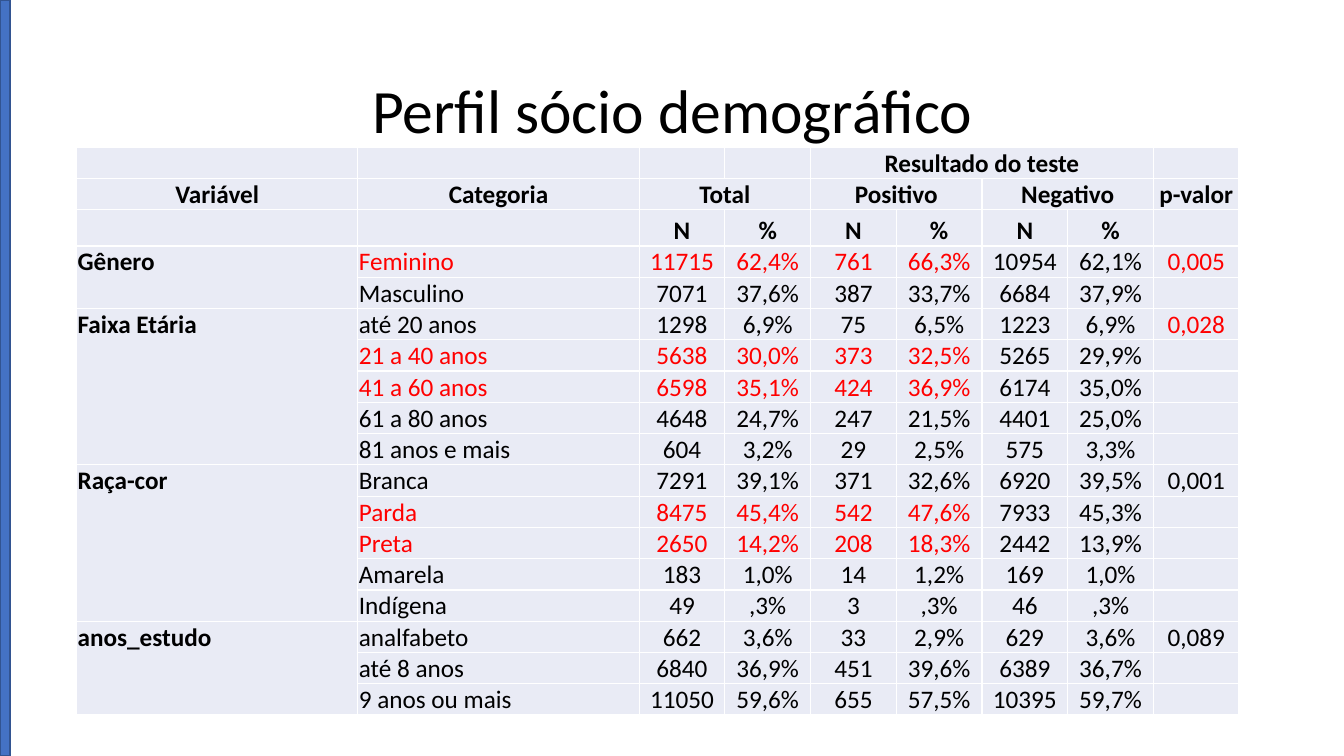
from pptx import Presentation
from pptx.dml.color import RGBColor
from pptx.enum.shapes import MSO_SHAPE
from pptx.enum.text import MSO_ANCHOR, PP_ALIGN
from pptx.util import Inches, Pt

TITLE = "Perfil sócio demográfico"
FONT = "Calibri"
BLACK, RED, CELL_FILL = "000000", "FF0000", "E9EBF5"
BAR_FILL, BAR_LINE = "4472C4", "325491"

HEADERS = [
    ["", "", "", "", "Resultado do teste", "", "", "", ""],
    ["Variável", "Categoria", "Total", "", "Positivo", "", "Negativo", "", "p-valor"],
    ["", "", "N", "%", "N", "%", "N", "%", ""],
]
HEADER_SPANS = [(0, 4, 7), (1, 2, 3), (1, 4, 5), (1, 6, 7)]  # row, first and last column

# variable, p-value, p-value colour, categories
GROUPS = [
    ("Gênero", "0,005", RED, [
        ("Feminino", "11715", "62,4%", "761", "66,3%", "10954", "62,1%"),
        ("Masculino", "7071", "37,6%", "387", "33,7%", "6684", "37,9%"),
    ]),
    ("Faixa Etária", "0,028", RED, [
        ("até 20 anos", "1298", "6,9%", "75", "6,5%", "1223", "6,9%"),
        ("21 a 40 anos", "5638", "30,0%", "373", "32,5%", "5265", "29,9%"),
        ("41 a 60 anos", "6598", "35,1%", "424", "36,9%", "6174", "35,0%"),
        ("61 a 80 anos", "4648", "24,7%", "247", "21,5%", "4401", "25,0%"),
        ("81 anos e mais", "604", "3,2%", "29", "2,5%", "575", "3,3%"),
    ]),
    ("Raça-cor", "0,001", BLACK, [
        ("Branca", "7291", "39,1%", "371", "32,6%", "6920", "39,5%"),
        ("Parda", "8475", "45,4%", "542", "47,6%", "7933", "45,3%"),
        ("Preta", "2650", "14,2%", "208", "18,3%", "2442", "13,9%"),
        ("Amarela", "183", "1,0%", "14", "1,2%", "169", "1,0%"),
        ("Indígena", "49", ",3%", "3", ",3%", "46", ",3%"),
    ]),
    ("anos_estudo", "0,089", BLACK, [
        ("analfabeto", "662", "3,6%", "33", "2,9%", "629", "3,6%"),
        ("até 8 anos", "6840", "36,9%", "451", "39,6%", "6389", "36,7%"),
        ("9 anos ou mais", "11050", "59,6%", "655", "57,5%", "10395", "59,7%"),
    ]),
]
HIGHLIGHTED = {"Feminino", "21 a 40 anos", "41 a 60 anos", "Parda", "Preta"}
HIGHLIGHTED_COLUMNS = range(1, 6)  # category, total and positive results

COLUMN_WIDTHS = [2.79] * 2 + [0.85] * 7
HEADER_HEIGHTS = [0.31, 0.31, 0.36]
ROW_HEIGHT = 0.31


def rgb(value):
    return RGBColor.from_string(value)


def style_paragraph(paragraph, size, color=BLACK, bold=False, alignment=PP_ALIGN.CENTER):
    paragraph.alignment = alignment
    font = paragraph.font
    font.name, font.size, font.bold = FONT, Pt(size), bold
    font.color.rgb = rgb(color)


def fill_cell(cell, text, color=BLACK, bold=False, alignment=PP_ALIGN.CENTER,
              anchor=MSO_ANCHOR.TOP):
    cell.text = text
    cell.fill.solid()
    cell.fill.fore_color.rgb = rgb(CELL_FILL)
    cell.margin_left = cell.margin_right = cell.margin_top = Inches(0.01)
    cell.margin_bottom = 0
    cell.vertical_anchor = anchor
    style_paragraph(cell.text_frame.paragraphs[0], 18, color, bold, alignment)


def add_title(slide):
    box = slide.shapes.add_textbox(Inches(0.92), Inches(0.4), Inches(11.5), Inches(1.45))
    frame = box.text_frame
    frame.word_wrap = True
    frame.vertical_anchor = MSO_ANCHOR.MIDDLE
    frame.text = TITLE
    frame.paragraphs[0].line_spacing = 0.9
    style_paragraph(frame.paragraphs[0], 44)


def add_profile_table(slide):
    category_count = sum(len(categories) for *_, categories in GROUPS)
    heights = HEADER_HEIGHTS + [ROW_HEIGHT] * category_count
    table = slide.shapes.add_table(
        len(heights), len(COLUMN_WIDTHS), Inches(0.76), Inches(1.46),
        Inches(sum(COLUMN_WIDTHS)), Inches(sum(heights))).table
    table.first_row = table.horz_banding = False
    for column, width in zip(table.columns, COLUMN_WIDTHS):
        column.width = Inches(width)
    for table_row, height in zip(table.rows, heights):
        table_row.height = Inches(height)

    for row, texts in enumerate(HEADERS):
        for column, text in enumerate(texts):
            fill_cell(table.cell(row, column), text, bold=True, anchor=MSO_ANCHOR.BOTTOM)
    for row, first, last in HEADER_SPANS:
        table.cell(row, first).merge(table.cell(row, last))

    row = len(HEADERS)
    for variable, p_value, p_color, categories in GROUPS:
        first_row = row
        for values in categories:
            is_first = row == first_row
            fill_cell(table.cell(row, 0), variable if is_first else "",
                      bold=True, alignment=PP_ALIGN.LEFT)
            for column, text in enumerate(values, start=1):
                is_red = values[0] in HIGHLIGHTED and column in HIGHLIGHTED_COLUMNS
                fill_cell(table.cell(row, column), text, RED if is_red else BLACK,
                          alignment=PP_ALIGN.LEFT if column == 1 else PP_ALIGN.CENTER)
            fill_cell(table.cell(row, 8), p_value if is_first else "", p_color,
                      anchor=MSO_ANCHOR.BOTTOM)
            row += 1
        table.cell(first_row, 0).merge(table.cell(row - 1, 0))


def add_side_bar(slide, height):
    bar = slide.shapes.add_shape(MSO_SHAPE.RECTANGLE, 0, 0, Inches(0.1), height)
    bar.shadow.inherit = False
    bar.fill.solid()
    bar.fill.fore_color.rgb = rgb(BAR_FILL)
    bar.line.color.rgb = rgb(BAR_LINE)
    bar.line.width = Pt(1)


def main():
    presentation = Presentation()
    presentation.slide_width = Inches(13.33)
    presentation.slide_height = Inches(7.5)
    slide = presentation.slides.add_slide(presentation.slide_layouts[6])
    add_title(slide)
    add_profile_table(slide)
    add_side_bar(slide, presentation.slide_height)
    presentation.save("out.pptx")


if __name__ == "__main__":
    main()
